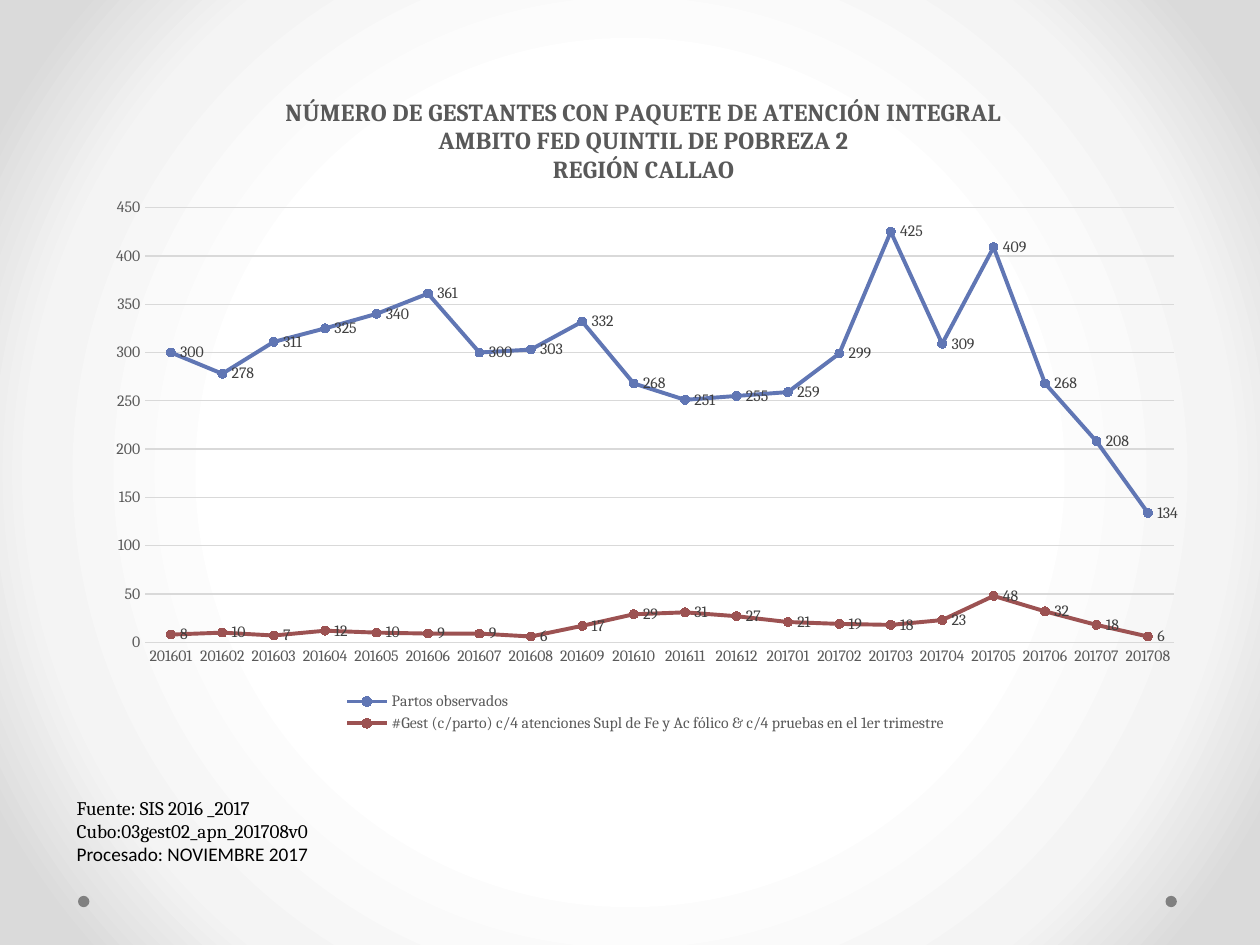
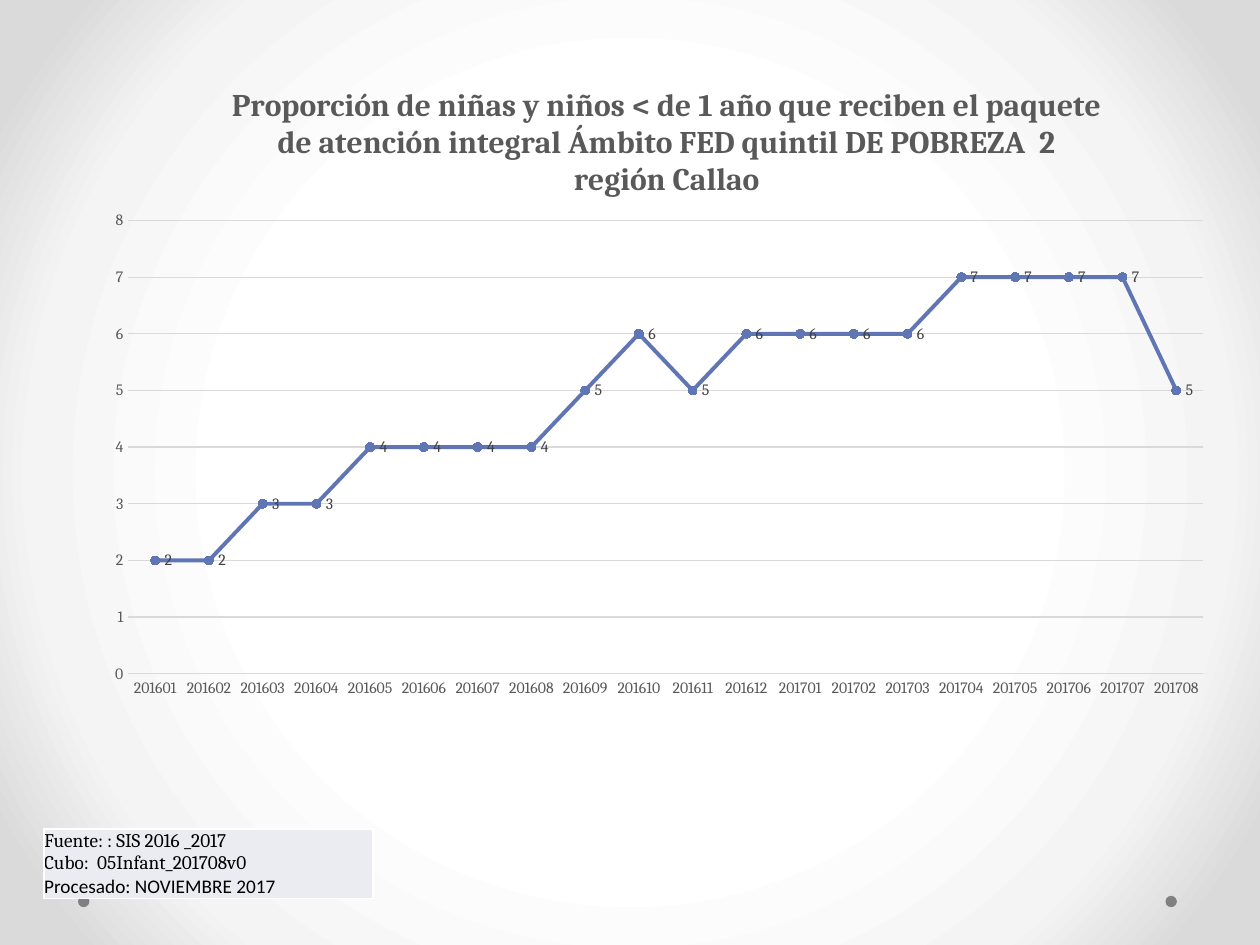
from lxml import etree
from pptx import Presentation
from pptx.chart.data import CategoryChartData
from pptx.dml.color import RGBColor
from pptx.enum import chart as charts, shapes, text
from pptx.oxml import parse_xml
from pptx.oxml.ns import nsdecls, qn
from pptx.util import Pt

SERIF, SANS = "Cambria", "Calibri"
BLUE, RED = "6076B4", "9C5252"
BLACK, DARK, GRAY, DOT, RULE = "000000", "404040", "595959", "808080", "D9D9D9"
WHITE, PALE = "FFFFFF", "EAECF2"
BACKDROP = [(50, WHITE), (76, "F4F4F4"), (92, "DADADA")]
MONTHS = [f"{year}{month:02}" for year, last in ((2016, 12), (2017, 8))
          for month in range(1, last + 1)]
BIRTHS = [300, 278, 311, 325, 340, 361, 300, 303, 332, 268,
          251, 255, 259, 299, 425, 309, 409, 268, 208, 134]
PACKAGES = [8, 10, 7, 12, 10, 9, 9, 6, 17, 29, 31, 27, 21, 19, 18, 23, 48, 32, 18, 6]
INFANTS = [2, 2, 3, 3, 4, 4, 4, 4, 5, 6, 5, 6, 6, 6, 6, 7, 7, 7, 7, 5]


def color(code):
    """Turn a hex string into a colour."""
    return RGBColor.from_string(code)


def style_font(font, size, code, name=SERIF, bold=False):
    """Set the size, colour, typeface and weight of a font."""
    font.size, font.name, font.bold = Pt(size), name, bold
    font.color.rgb = color(code)


def write(frame, lines, *, size, code, fonts=(SERIF,), bold=False, align=None):
    """Write one paragraph per line; the last font serves any further lines."""
    for index, line in enumerate(lines):
        para = frame.add_paragraph() if index else frame.paragraphs[0]
        para.alignment = align
        span = para.add_run()
        span.text = line
        style_font(span.font, size, code, fonts[min(index, len(fonts) - 1)], bold)


def write_source(frame, lines):
    """Write the three lines that name the source of the data."""
    write(frame, [*lines, "Procesado: NOVIEMBRE 2017"], size=11, code=BLACK,
          fonts=(SERIF, SERIF, SANS))


def set_backdrop(master):
    """Give the master a circular gradient background."""
    master.background.fill.gradient()
    old = master.element.find(".//" + qn("a:gradFill"))
    stops = "".join(f'<a:gs pos="{share * 1000}"><a:srgbClr val="{code}"/></a:gs>'
                    for share, code in BACKDROP)
    old.getparent().replace(old, parse_xml(
        f'<a:gradFill {nsdecls("a")} rotWithShape="1"><a:gsLst>{stops}</a:gsLst>'
        '<a:path path="circle"><a:fillToRect l="50000" t="50000" r="50000" b="50000"/>'
        '</a:path></a:gradFill>'))


def add_dots(page, master):
    """Draw the two footer dots and move them to the master."""
    for left in (44.6, 666):
        dot = page.shapes.add_shape(shapes.MSO_SHAPE.OVAL, Pt(left), Pt(511.9),
                                    Pt(6.5), Pt(6.5))
        dot.shadow.inherit = False
        dot.fill.solid()
        dot.fill.fore_color.rgb = color(DOT)
        dot.line.fill.background()
        master.shapes.element.append(dot.element)


def place(element, x, y, width=None, height=None, after=None, inner=False):
    """Fix the place of a chart part as shares of the chart."""
    for old in element.findall(qn("c:layout")):
        element.remove(old)
    layout = parse_xml(f'<c:layout {nsdecls("c")}><c:manualLayout/></c:layout>')
    values = [("layoutTarget", "inner" if inner else None), ("xMode", "edge"),
              ("yMode", "edge"), ("x", x), ("y", y), ("w", width), ("h", height)]
    for tag, value in values:
        if value is not None:
            etree.SubElement(layout[0], qn(f"c:{tag}")).set("val", str(value))
    if after:
        element.find(qn(after)).addnext(layout)
    else:
        element.insert(0, layout)


def style_line(line, code, width):
    """Set the colour and width of a line."""
    line.color.rgb, line.width = color(code), Pt(width)


def style_axes(chart, top, step):
    """Format both axes and the gridlines."""
    for axis in (chart.category_axis, chart.value_axis):
        axis.major_tick_mark = axis.minor_tick_mark = charts.XL_TICK_MARK.NONE
        style_font(axis.tick_labels.font, 9, GRAY)
    style_line(chart.category_axis.format.line, RULE, 0.75)
    scale = chart.value_axis
    scale.minimum_scale, scale.maximum_scale, scale.major_unit = 0, top, step
    scale.format.line.fill.background()
    scale.tick_labels.number_format = "0"
    scale.tick_labels.number_format_is_linked = False
    style_line(scale.major_gridlines.format.line, RULE, 0.75)


def style_series(series, code):
    """Format a line with its markers and value labels."""
    series.smooth = False
    style_line(series.format.line, code, 2.25)
    marker = series.marker
    marker.style, marker.size = charts.XL_MARKER_STYLE.CIRCLE, 5
    marker.format.fill.solid()
    marker.format.fill.fore_color.rgb = color(code)
    style_line(marker.format.line, code, 0.75)
    labels = series.data_labels
    labels.show_value = True
    labels.number_format, labels.number_format_is_linked = "0", False
    labels.position = charts.XL_LABEL_POSITION.RIGHT
    style_font(labels.font, 9, DARK)


def add_line_chart(page, box, series, *, title, size, title_at, plot_at, top, step):
    """Add a titled line chart of the monthly series."""
    data = CategoryChartData(number_format="0")
    data.categories = MONTHS
    for name, values in series.items():
        data.add_series(name, values)
    chart = page.shapes.add_chart(charts.XL_CHART_TYPE.LINE_MARKERS,
                                  *map(Pt, box), data).chart
    style_font(chart.font, 10, BLACK)
    chart.has_legend = False
    chart.plots[0].vary_by_categories = False
    write(chart.chart_title.text_frame, title, size=size, code=GRAY, bold=True,
          align=text.PP_ALIGN.CENTER)
    place(chart.chart_title.element, *title_at, after="c:tx")
    place(chart.element.find(".//" + qn("c:plotArea")), *plot_at, inner=True)
    style_axes(chart, top, step)
    for line, code in zip(chart.plots[0].series, (BLUE, RED)):
        style_series(line, code)
    return chart


def add_legend(chart, *place_at):
    """Add a legend below the plot."""
    chart.has_legend = True
    legend = chart.legend
    legend.position = charts.XL_LEGEND_POSITION.BOTTOM
    legend.include_in_layout = False
    style_font(legend.font, 9, GRAY)
    place(legend._element, *place_at, after="c:legendPos")


def add_source_box(page, box, lines):
    """Add the source as plain text."""
    frame = page.shapes.add_textbox(*map(Pt, box)).text_frame
    frame.word_wrap = True
    write_source(frame, lines)


def add_source_table(page, box, lines):
    """Add the source as a table of one shaded cell."""
    table = page.shapes.add_table(1, 1, *map(Pt, box)).table
    table.first_row = table.horz_banding = False
    cell = table.cell(0, 0)
    cell.margin_left = cell.margin_right = cell.margin_top = cell.margin_bottom = 0
    cell.vertical_anchor = text.MSO_ANCHOR.BOTTOM
    write_source(cell.text_frame, lines)
    properties = cell._tc.get_or_add_tcPr()
    for side in "LRTB":
        properties.append(parse_xml(
            f'<a:ln{side} {nsdecls("a")} w="{Pt(1)}"><a:solidFill>'
            f'<a:srgbClr val="{WHITE}"/></a:solidFill></a:ln{side}>'))
    cell.fill.solid()
    cell.fill.fore_color.rgb = color(PALE)


def build_pregnancy_page(page):
    """Show births and complete care packages by month."""
    add_source_box(page, (36.7, 451.4, 215.3, 47.5),
                   ["Fuente: SIS 2016 _2017", "Cubo:03gest02_apn_201708v0"])
    chart = add_line_chart(
        page, (54, 37.4, 629.3, 385.2),
        {"Partos observados": BIRTHS,
         "#Gest (c/parto) c/4 atenciones Supl de Fe y Ac fólico & c/4 pruebas "
         "en el 1er trimestre": PACKAGES},
        title=["NÚMERO DE GESTANTES CON PAQUETE DE ATENCIÓN INTEGRAL",
               "AMBITO FED QUINTIL DE POBREZA 2", "REGIÓN CALLAO"],
        size=14, title_at=(0.17, 0.04), plot_at=(0.046, 0.211, 0.934, 0.645),
        top=450, step=50)
    add_legend(chart, 0.22, 0.925, 0.56, 0.07)


def build_infant_page(page):
    """Show the share of infants with the care package by month."""
    add_source_table(page, (25.2, 473.8, 187.9, 39.6),
                     ["Fuente: : SIS 2016 _2017", "Cubo:  05Infant_201708v0"])
    add_line_chart(
        page, (52.6, 31.7, 647.3, 374.4), {"Series 1": INFANTS},
        title=["Proporción de niñas y niños < de 1 año que reciben el paquete",
               "de atención integral Ámbito FED quintil DE POBREZA  2",
               "región Callao"],
        size=18, title_at=(0.12, 0.04), plot_at=(0.032, 0.252, 0.949, 0.692),
        top=8, step=1)


def main():
    """Build and save the deck."""
    deck = Presentation()
    deck.slide_width, deck.slide_height = Pt(720), Pt(540)
    blank = deck.slide_layouts[6]
    pages = [deck.slides.add_slide(blank) for _ in range(2)]
    for page in pages:
        for holder in list(page.placeholders):
            holder.element.getparent().remove(holder.element)
    set_backdrop(deck.slide_master)
    add_dots(pages[0], deck.slide_master)
    build_pregnancy_page(pages[0])
    build_infant_page(pages[1])
    deck.save("out.pptx")


if __name__ == "__main__":
    main()
